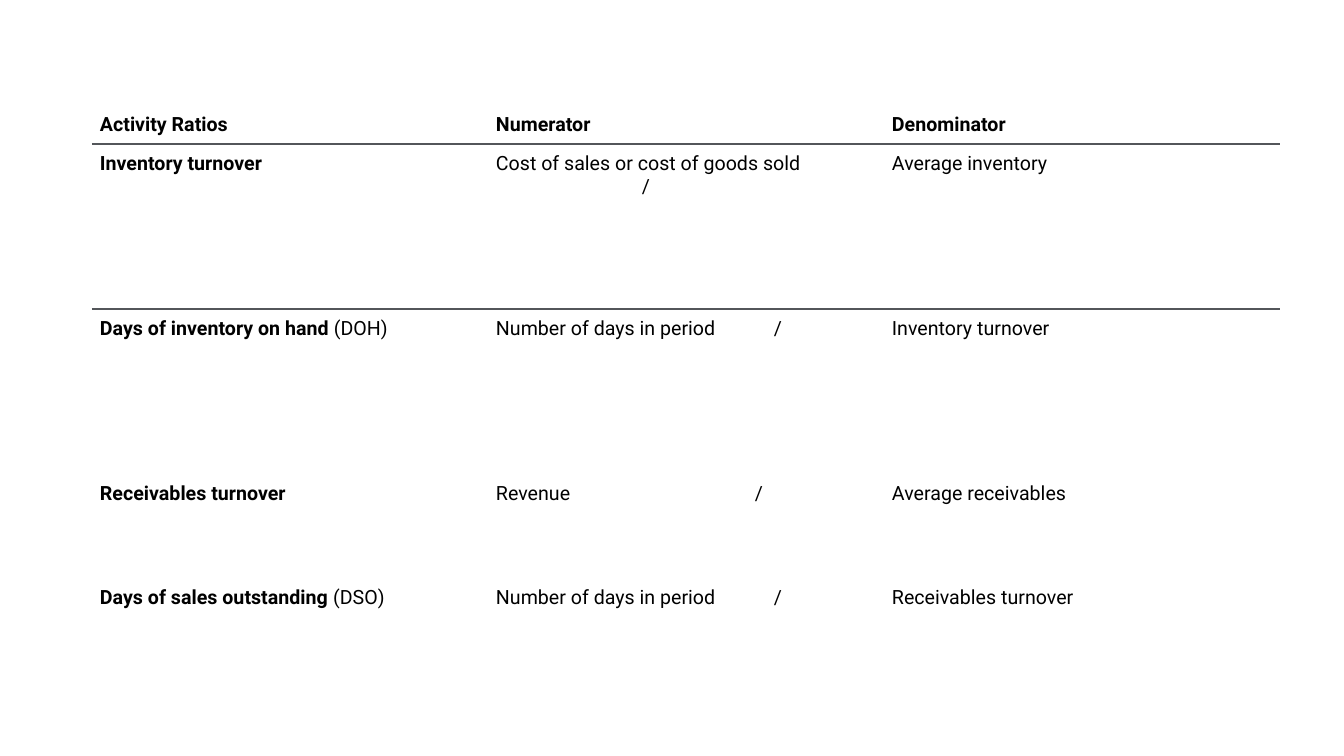
import lxml.etree
import pptx
import pptx.dml.color
import pptx.enum.text
import pptx.oxml
import pptx.oxml.ns
import pptx.util

BLACK = pptx.dml.color.RGBColor(0x00, 0x00, 0x00)
RULE_GREY = pptx.dml.color.RGBColor(0x53, 0x56, 0x5A)
PLAIN_TABLE = "{2D5ABB26-0587-4C30-8999-92F81FD0307C}"  # no style, no grid
ANCHOR = pptx.enum.text.MSO_ANCHOR


def px(count):
    return pptx.util.Emu(round(count * 914400 / 100.8))


class Sheet:
    """Holds the text style and the current slide."""

    font = {"name": "Roboto", "size": pptx.util.Pt(14)}
    margins = {f"margin_{side}": px(8) for side in ("left", "right", "top", "bottom")}

    def __init__(self, deck):
        self.slide = deck.slides.add_slide(deck.slide_layouts[6])

    def table(self, left, top, column_widths, row_heights):
        frame = self.slide.shapes.add_table(
            len(row_heights), len(column_widths), px(left), px(top),
            px(sum(column_widths)), px(sum(row_heights)))
        grid = frame.table
        grid.horz_banding = False
        properties = grid._tbl.tblPr
        properties.find(pptx.oxml.ns.qn("a:tableStyleId")).text = PLAIN_TABLE
        for column, width in zip(grid.columns, column_widths):
            column.width = px(width)
        for row, height in zip(grid.rows, row_heights):
            row.height = px(height)
        return grid

    def cell(self, cell, parts, anchor=ANCHOR.TOP, tab=None):
        """Write (text, bold) parts, with an optional tab stop in px."""
        for name, value in {**self.margins, "vertical_anchor": anchor}.items():
            setattr(cell, name, value)
        cell.fill.background()
        paragraph = cell.text_frame.paragraphs[0]
        for text, bold in parts:
            if text == "\n":
                paragraph.add_line_break()
                continue
            run = paragraph.add_run()
            run.text = text
            for name, value in {**self.font, "bold": bold}.items():
                setattr(run.font, name, value)
            run.font.color.rgb = BLACK
        if tab:
            stops = lxml.etree.SubElement(
                paragraph._p.get_or_add_pPr(), pptx.oxml.ns.qn("a:tabLst"))
            lxml.etree.SubElement(
                stops, pptx.oxml.ns.qn("a:tab"), pos=str(px(tab)), algn="l")

    def border(self, cell, side):
        line = pptx.oxml.parse_xml(
            f'<a:ln{side} {pptx.oxml.ns.nsdecls("a")} w="{pptx.util.Pt(1.5)}">'
            f'<a:solidFill><a:srgbClr val="{RULE_GREY}"/></a:solidFill></a:ln{side}>')
        cell._tc.get_or_add_tcPr().insert(0, line)


HEADINGS = ["Activity Ratios", "Numerator", "Denominator"]

# Ratio, abbreviation, numerator, break before the slash, slash position, denominator
RATIOS = [
    ("Inventory turnover", "", "Cost of sales or cost of goods sold", True, 146,
     "Average inventory"),
    ("Days of inventory on hand", "(DOH)", "Number of days in period", False, 278,
     "Inventory turnover"),
    ("Receivables turnover", "", "Revenue", False, 259, "Average receivables"),
    ("Days of sales outstanding", "(DSO)", "Number of days in period", False, 278,
     "Receivables turnover"),
]


def main():
    deck = pptx.Presentation()
    deck.slide_width, deck.slide_height = px(1344), px(756)
    sheet = Sheet(deck)
    ratios = sheet.table(92, 40, [396] * 3, [104, 165, 165, 104, 165])

    # Header row and the rule beneath it
    for column, heading in enumerate(HEADINGS):
        sheet.cell(ratios.cell(0, column), [(heading, True)], ANCHOR.BOTTOM)
        sheet.border(ratios.cell(0, column), "B")
        sheet.border(ratios.cell(1, column), "T")

    # One row per ratio
    for row, (ratio, short, numerator, wraps, slash, denominator) in enumerate(RATIOS, 1):
        name = [(ratio + " ", True), (short, False)] if short else [(ratio, True)]
        wrap = [("\n", False)] if wraps else []
        sheet.cell(ratios.cell(row, 0), name)
        sheet.cell(ratios.cell(row, 1),
                   [(numerator, False), *wrap, ("\t/", False)], tab=slash)
        sheet.cell(ratios.cell(row, 2), [(denominator, False)])

    deck.save("out.pptx")


if __name__ == "__main__":
    main()
